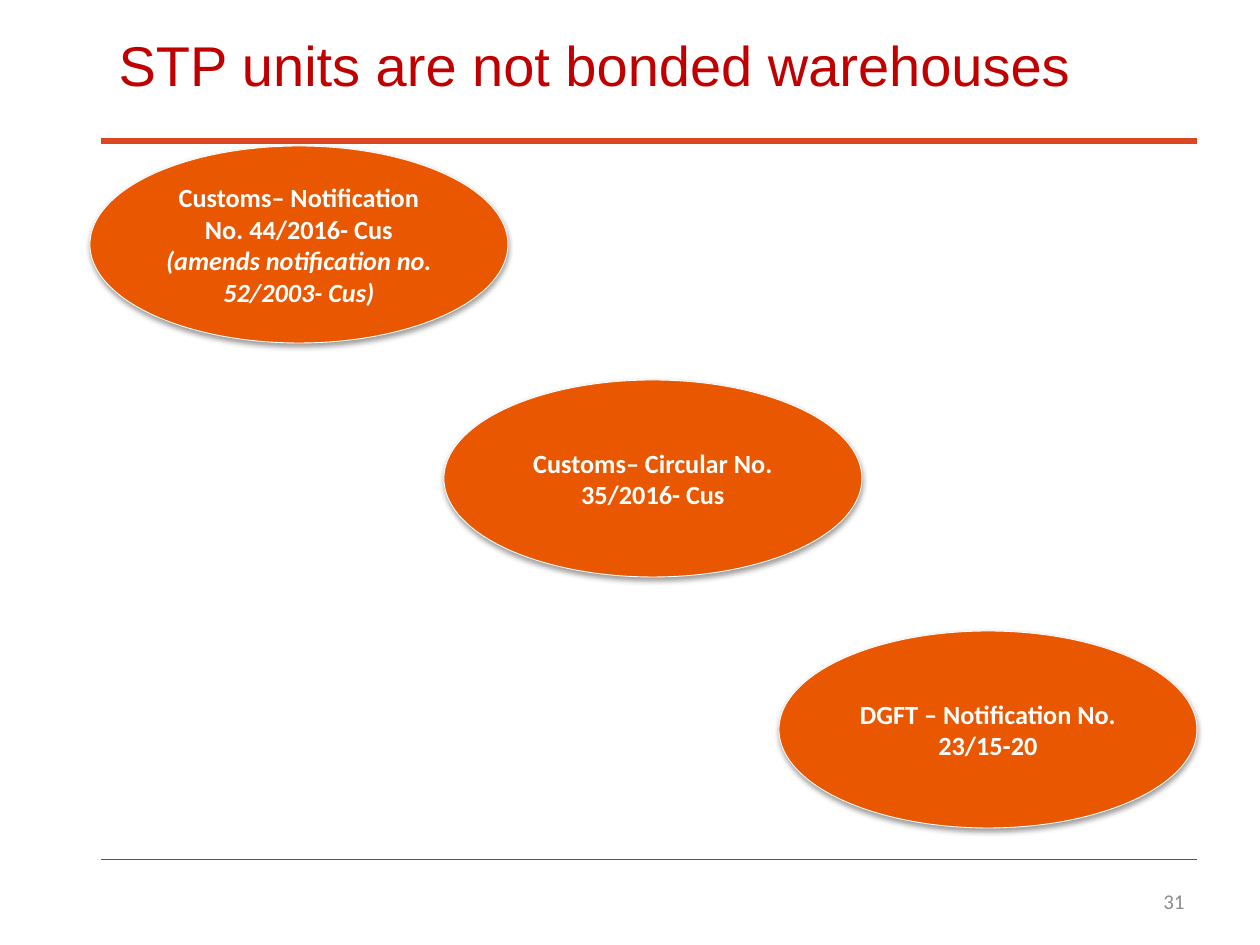
from typing import NamedTuple

from lxml.etree import SubElement
from pptx import Presentation
from pptx.dml.color import RGBColor
from pptx.enum.shapes import MSO_CONNECTOR as Link, MSO_SHAPE as Kind
from pptx.enum.text import MSO_ANCHOR as Anchor, MSO_AUTO_SIZE as Fit, PP_ALIGN as Align
from pptx.oxml.ns import qn
from pptx.util import Emu, Pt

SCALE = 914400 / 126
WHITE = RGBColor(0xFF, 0xFF, 0xFF)
BLACK = RGBColor(0x00, 0x00, 0x00)
ORANGE = RGBColor(0xE9, 0x57, 0x00)
BAR = RGBColor(0xDA, 0x47, 0x20)
RULE = RGBColor(0xB2, 0x2F, 0x16)
RED = RGBColor(0xC0, 0x00, 0x00)
GREY = RGBColor(0x8C, 0x8C, 0x8C)

LEFT, RIGHT = 101, 1197
OVAL_W, OVAL_H = 418, 197


class Oval(NamedTuple):
    x: int
    y: int
    text: str
    note: str = ""
    after: int = 6


OVALS = [
    Oval(90, 146, "Customs– Notification No. 44/2016- Cus ",
         "(amends notification no. 52/2003- Cus)"),
    Oval(444, 380, "Customs– Circular No. 35/2016- Cus"),
    Oval(779, 631, "DGFT – Notification No. 23/15-20", after=0),
]


def px(n: int) -> Emu:
    return Emu(round(n * SCALE))


def place(shape, x: int, y: int, w: int, h: int) -> None:
    shape.left, shape.top, shape.width, shape.height = map(px, (x, y, w, h))


def write(shape, text: str, *, size: int, color: RGBColor, font: str = "Calibri",
          align=Align.LEFT, bold: bool = False, note: str = "",
          after: int = 0, lines: float = 1.0) -> None:
    """Fill a shape with one paragraph; the note follows in italics."""
    frame = shape.text_frame
    frame.word_wrap = True
    frame.auto_size = Fit.NONE
    frame.vertical_anchor = Anchor.MIDDLE
    para = frame.paragraphs[0]
    para.alignment = align
    para.space_before, para.space_after = Pt(0), Pt(after)
    para.line_spacing = lines
    for part, slant in ((text, False), (note, True)):
        if part:
            run = para.add_run()
            run.text = part
            face = run.font
            face.name, face.size = font, Pt(size)
            face.bold, face.italic = bold, slant
            face.color.rgb = color


def add_shadow(shape) -> None:
    """Cast a soft shadow straight down."""
    shape.shadow.inherit = False
    effects = shape._element.spPr.find(qn("a:effectLst"))
    outer = SubElement(effects, qn("a:outerShdw"), blurRad=str(Pt(3.1)),
                       dist=str(Pt(1.6)), dir="5400000", rotWithShape="0")
    color = SubElement(outer, qn("a:srgbClr"), val=str(BLACK))
    SubElement(color, qn("a:alpha"), val="38000")


def add_oval(slide, oval: Oval) -> None:
    shape = slide.shapes.add_shape(
        Kind.OVAL, px(oval.x), px(oval.y), px(OVAL_W), px(OVAL_H))
    shape.fill.solid()
    shape.fill.fore_color.rgb = ORANGE
    shape.line.color.rgb = WHITE
    shape.line.width = Pt(0.5)
    add_shadow(shape)
    write(shape, oval.text, note=oval.note, size=15, color=WHITE, bold=True,
          align=Align.CENTER, after=oval.after)


def add_frame(slide) -> None:
    """Draw the bar under the title and the rule above the page number."""
    rule = slide.shapes.add_connector(Link.STRAIGHT, px(LEFT), px(859), px(RIGHT), px(859))
    rule.line.color.rgb = RULE
    rule.line.width = Pt(0.5)
    SubElement(rule._element.spPr, qn("a:effectLst"))

    bar = slide.shapes.add_shape(
        Kind.PARALLELOGRAM, px(LEFT), px(138), px(RIGHT - LEFT), px(6))
    bar.adjustments[0] = 0
    bar.shadow.inherit = False
    bar.fill.solid()
    bar.fill.fore_color.rgb = BAR
    bar.line.fill.background()


def main() -> None:
    deck = Presentation()
    deck.slide_width, deck.slide_height = px(1260), px(945)
    slide = deck.slides.add_slide(deck.slide_layouts[5])

    add_frame(slide)
    title = slide.shapes.title
    place(title, 106, 9, 1091, 118)
    write(title, "STP units are not bonded warehouses", size=32, color=RED,
          font="Arial", lines=0.9)
    page = slide.shapes.add_textbox(px(914), px(876), px(283), px(50))
    write(page, "31", size=12, color=GREY, align=Align.RIGHT)
    for oval in OVALS:
        add_oval(slide, oval)

    deck.save("out.pptx")


if __name__ == "__main__":
    main()
